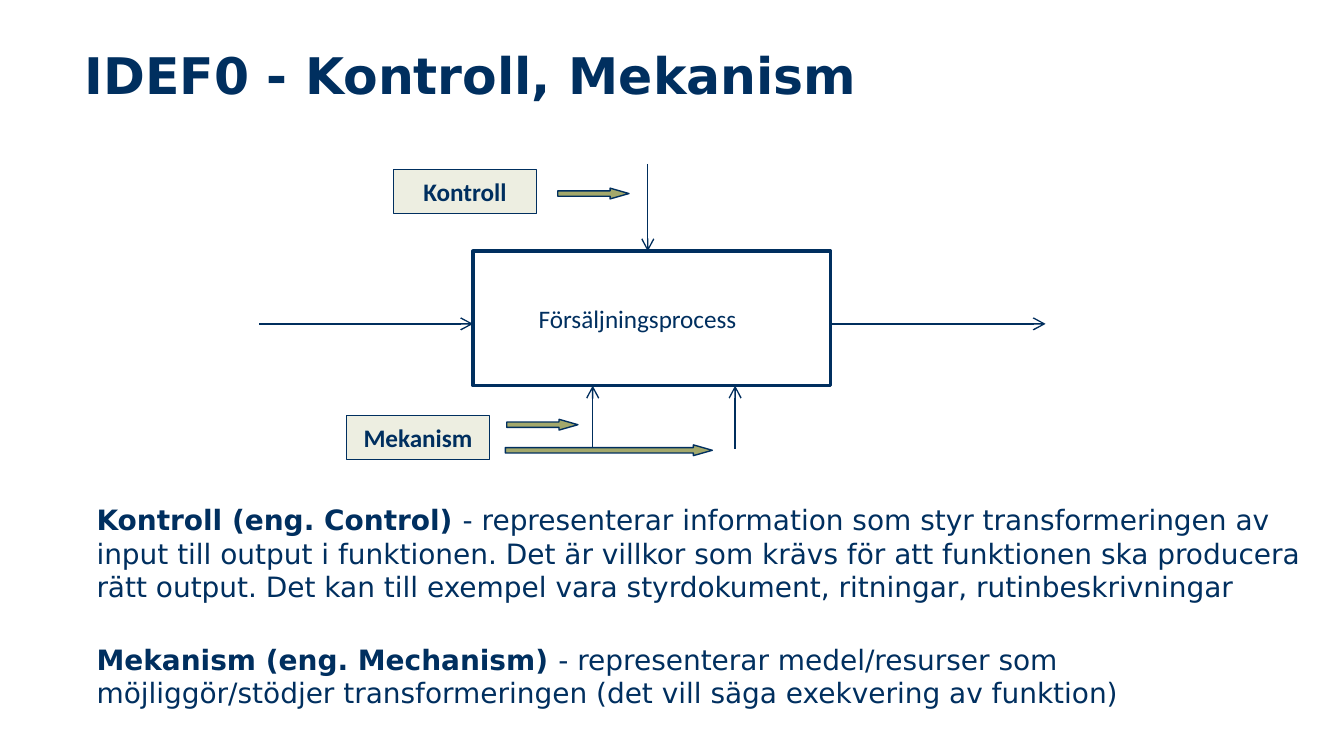
from lxml import etree
from pptx import Presentation
from pptx.dml.color import RGBColor
from pptx.enum.shapes import MSO_CONNECTOR, MSO_SHAPE
from pptx.enum.text import MSO_ANCHOR, MSO_AUTO_SIZE, PP_ALIGN
from pptx.oxml.ns import qn
from pptx.util import Inches, Pt

COLORS = {"navy": "002F5F", "line": "002E5D", "white": "FFFFFF",
          "label": "EDEEE1", "olive": "A3A86B"}


def rgb(name):
    return RGBColor.from_string(COLORS[name])


def add_block(kind, box, fill, width):
    sp = s.shapes.add_shape(kind, *map(Inches, box))
    sp.shadow.inherit = False
    sp.fill.solid()
    sp.fill.fore_color.rgb = rgb(fill)
    sp.line.color.rgb = rgb("navy")
    sp.line.width = Pt(width)
    return sp


prs = Presentation()
prs.slide_width, prs.slide_height = Inches(10), Inches(10 * 9 / 16)
s = prs.slides.add_slide(prs.slide_layouts[5])

title = s.shapes.title
title.left, title.top = Inches(0.53), Inches(0.28)
title.width, title.height = Inches(6.75), Inches(0.94)
tf = title.text_frame
tf.text = "IDEF0 - Kontroll, Mekanism"
tf.auto_size = MSO_AUTO_SIZE.NONE
tf.vertical_anchor = MSO_ANCHOR.TOP
p = tf.paragraphs[0]
p.alignment = PP_ALIGN.LEFT
p.font.name, p.font.size, p.font.bold = "DejaVu Sans", Pt(27), True
p.font.color.rgb = rgb("navy")

left, top, right, bottom = 3.52, 1.87, 6.18, 2.87
add_block(MSO_SHAPE.RECTANGLE, (left, top, right - left, bottom - top), "white", 2)

flows = [
    (1.93, 2.41, left, 2.41),
    (right, 2.41, 7.78, 2.41),
    (4.82, 1.22, 4.82, top),
    (4.41, 3.34, 4.41, bottom),
    (5.47, 3.34, 5.47, bottom),
]
for ends in flows:
    flow = s.shapes.add_connector(MSO_CONNECTOR.STRAIGHT, *map(Inches, ends))
    flow.line.color.rgb = rgb("line")
    flow.line.width = Pt(0.75)
    etree.SubElement(flow.line._get_or_add_ln(), qn("a:tailEnd"), type="arrow")
    etree.SubElement(flow._element.spPr, qn("a:effectLst"))

process = s.shapes.add_textbox(Inches(3.91), Inches(2.21), Inches(1.98), Inches(0.33))
tf = process.text_frame
tf.word_wrap = True
tf.text = "Försäljningsprocess"
p = tf.paragraphs[0]
p.font.name, p.font.size = "Calibri", Pt(13.5)
p.font.color.rgb = rgb("navy")

for text, x, y in [("Kontroll", 2.93, 1.26), ("Mekanism", 2.58, 3.09)]:
    label = add_block(MSO_SHAPE.RECTANGLE, (x, y, 1.06, 0.33), "label", 0.25)
    tf = label.text_frame
    tf.text = text
    tf.vertical_anchor = MSO_ANCHOR.MIDDLE
    p = tf.paragraphs[0]
    p.alignment = PP_ALIGN.CENTER
    p.font.name, p.font.size, p.font.bold = "Calibri", Pt(13.5), True
    p.font.color.rgb = rgb("navy")

definitions = [
    ((0.62, 3.69, 9.27, 1.31), "Kontroll (eng. Control) ",
     "- representerar information som styr transformeringen av input till output "
     "i funktionen. Det är villkor som krävs för att funktionen ska producera rätt "
     "output. Det kan till exempel vara styrdokument, ritningar, rutinbeskrivningar"),
    ((0.62, 4.73, 8.92, 0.61), "Mekanism (eng. Mechanism) ",
     "- representerar medel/resurser som möjliggör/stödjer transformeringen "
     "(det vill säga exekvering av funktion)"),
]
for box, term, meaning in definitions:
    tf = s.shapes.add_textbox(*map(Inches, box)).text_frame
    tf.word_wrap = True
    p = tf.paragraphs[0]
    p.font.name, p.font.size = "DejaVu Sans", Pt(15)
    p.font.color.rgb = rgb("navy")
    for text, bold in [(term, True), (meaning, False)]:
        r = p.add_run()
        r.text = text
        r.font.bold = bold

for x, y, width in [(3.77, 3.12, 0.53), (4.15, 1.4, 0.53), (3.76, 3.31, 1.54)]:
    pointer = add_block(MSO_SHAPE.LEFT_ARROW, (x, y, width, 0.08), "olive", 0.75)
    pointer.rotation = 180
    pointer.adjustments[0] = 0.5
    pointer.adjustments[1] = 1.76

prs.save("out.pptx")
